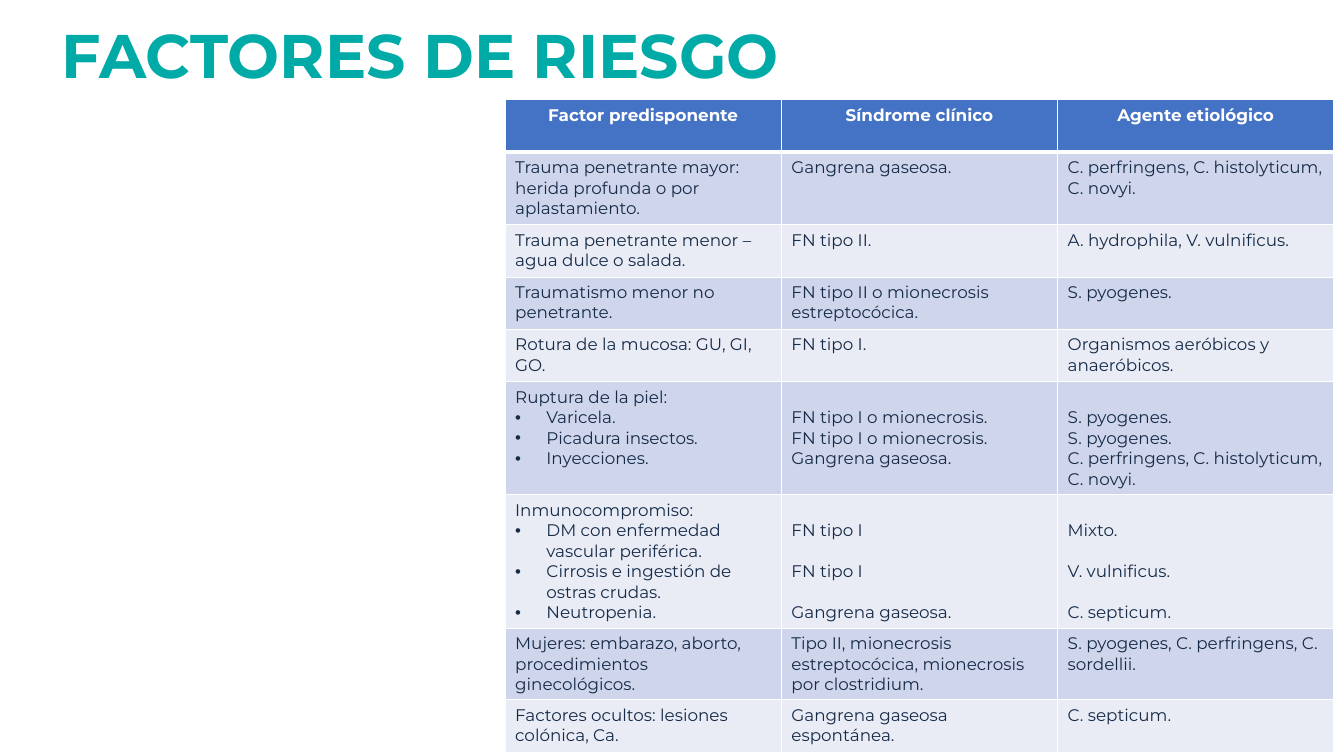
from lxml import etree
from pptx import Presentation
from pptx.dml.color import RGBColor
from pptx.enum import text
from pptx.oxml import ns
from pptx.util import Inches, Pt

FONT = "Montserrat"
TEAL, NAVY, BLUE, WHITE = "00AAA7", "152B48", "4472C4", "FFFFFF"
BANDS = ("CFD5EA", "E9EBF5")
LINE_HEIGHT = 14.7  # points, one line of 12 pt text

HEADINGS = ("Factor predisponente", "Síndrome clínico", "Agente etiológico")
# Row height, then the three cells; line breaks separate paragraphs.
FACTORS = (
    (0.72, "Trauma penetrante mayor: herida profunda o por aplastamiento.",
     "Gangrena gaseosa.", "C. perfringens, C. histolyticum, C. novyi."),
    (0.52, "Trauma penetrante menor – agua dulce o salada.",
     "FN tipo II.", "A. hydrophila, V. vulnificus."),
    (0.52, "Traumatismo menor no penetrante.",
     "FN tipo II o mionecrosis estreptocócica.", "S. pyogenes."),
    (0.52, "Rotura de la mucosa: GU, GI, GO.",
     "FN tipo I.", "Organismos aeróbicos y anaeróbicos."),
    (1.12, "Ruptura de la piel:\nVaricela.\nPicadura insectos.\nInyecciones.",
     "FN tipo I o mionecrosis.\nFN tipo I o mionecrosis.\nGangrena gaseosa.",
     "S. pyogenes.\nS. pyogenes.\nC. perfringens, C. histolyticum, C. novyi."),
    (1.32, "Inmunocompromiso:\nDM con enfermedad vascular periférica.\n"
     "Cirrosis e ingestión de ostras crudas.\nNeutropenia.",
     "FN tipo I\nFN tipo I\nGangrena gaseosa.",
     "Mixto.\nV. vulnificus.\nC. septicum."),
    (0.71, "Mujeres: embarazo, aborto, procedimientos ginecológicos.",
     "Tipo II, mionecrosis estreptocócica, mionecrosis por clostridium.",
     "S. pyogenes, C. perfringens, C. sordellii."),
    (0.52, "Factores ocultos: lesiones colónica, Ca.",
     "Gangrena gaseosa espontánea.", "C. septicum."),
)
SPACED_ROW = 6  # its list entries take two lines each
HEADER_HEIGHT, COLUMN_WIDTH = 0.52, 2.74


def color(value):
    return RGBColor.from_string(value)


def style(paragraph, size, value, bold=False):
    for span in paragraph.runs:
        span.font.name = FONT
        span.font.size = Pt(size)
        span.font.bold = bold
        span.font.color.rgb = color(value)


def add_bullet(paragraph):
    properties = paragraph._p.get_or_add_pPr()
    properties.set("marL", str(Inches(0.31)))
    properties.set("indent", str(-Inches(0.31)))
    etree.SubElement(properties, ns.qn("a:buFont")).set("typeface", "Arial")
    etree.SubElement(properties, ns.qn("a:buChar")).set("char", "•")


def add_borders(cell, **widths):
    """Draw white borders; widths are in points by side (L, R, T, B)."""
    properties = cell._tc.get_or_add_tcPr()
    for side, width in widths.items():
        line = etree.SubElement(properties, ns.qn(f"a:ln{side}"), w=str(Pt(width)))
        fill = etree.SubElement(line, ns.qn("a:solidFill"))
        etree.SubElement(fill, ns.qn("a:srgbClr")).set("val", WHITE)


def fill_cell(cell, words, row, column):
    header = row == 0
    add_borders(cell, L=1, R=1, T=3 if row == 1 else 1, B=3 if header else 1)
    cell.fill.solid()
    cell.fill.fore_color.rgb = color(BLUE if header else BANDS[(row - 1) % 2])
    cell.text_frame.text = words
    paragraphs = cell.text_frame.paragraphs
    if column > 0 and len(paragraphs) > 1:
        cell.margin_top = Inches(0.05) + Pt(LINE_HEIGHT)
    for index, paragraph in enumerate(paragraphs):
        if index > 0 and column == 0:
            add_bullet(paragraph)
        elif index > 0 and row == SPACED_ROW:
            paragraph.space_before = Pt(LINE_HEIGHT)
        if header:
            paragraph.alignment = text.PP_ALIGN.CENTER
        style(paragraph, 12, WHITE if header else NAVY, header)


def add_title(page, words):
    title = page.shapes.title
    title.left, title.top = Inches(0.51), Inches(0.01)
    title.width, title.height = Inches(11.5), Inches(1.15)
    frame = title.text_frame
    frame.text = words
    frame.word_wrap = True
    frame.auto_size = text.MSO_AUTO_SIZE.NONE
    frame.vertical_anchor = text.MSO_ANCHOR.MIDDLE
    paragraph = frame.paragraphs[0]
    paragraph.alignment = text.PP_ALIGN.LEFT
    paragraph.line_spacing = 0.9
    style(paragraph, 44, TEAL, True)


def add_factor_table(page):
    rows = ((HEADER_HEIGHT, *HEADINGS), *FACTORS)
    table = page.shapes.add_table(
        len(rows), len(HEADINGS), Inches(5.01), Inches(0.99),
        Inches(COLUMN_WIDTH * len(HEADINGS)),
        Inches(sum(height for height, *_ in rows))).table
    for column in table.columns:
        column.width = Inches(COLUMN_WIDTH)
    for row, (height, *cells) in enumerate(rows):
        table.rows[row].height = Inches(height)
        for column, words in enumerate(cells):
            fill_cell(table.cell(row, column), words, row, column)


def main():
    deck = Presentation()
    deck.slide_width, deck.slide_height = Inches(13.33), Inches(7.5)
    page = deck.slides.add_slide(deck.slide_layouts[5])
    add_title(page, "FACTORES DE RIESGO")
    add_factor_table(page)
    deck.save("out.pptx")


if __name__ == "__main__":
    main()
